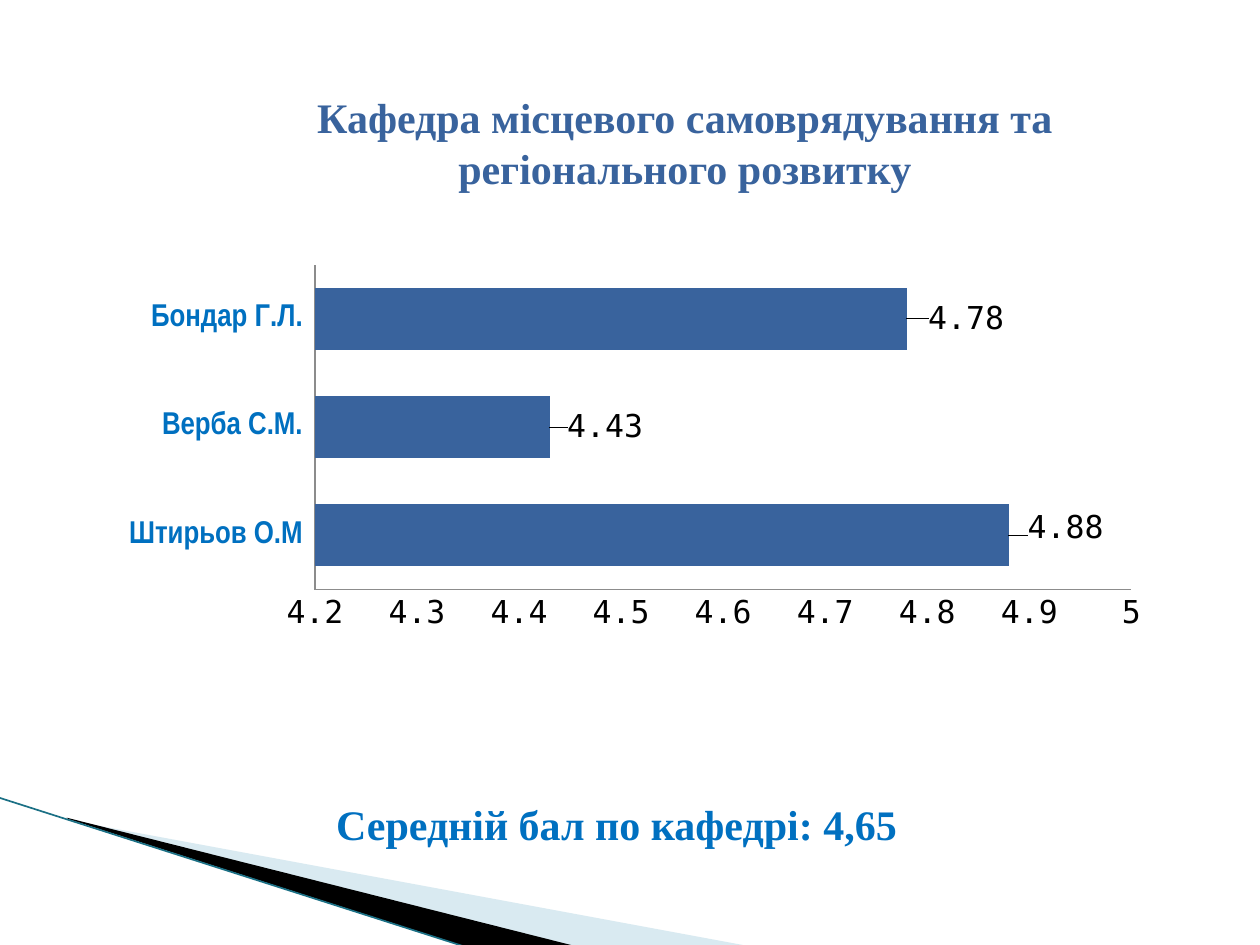
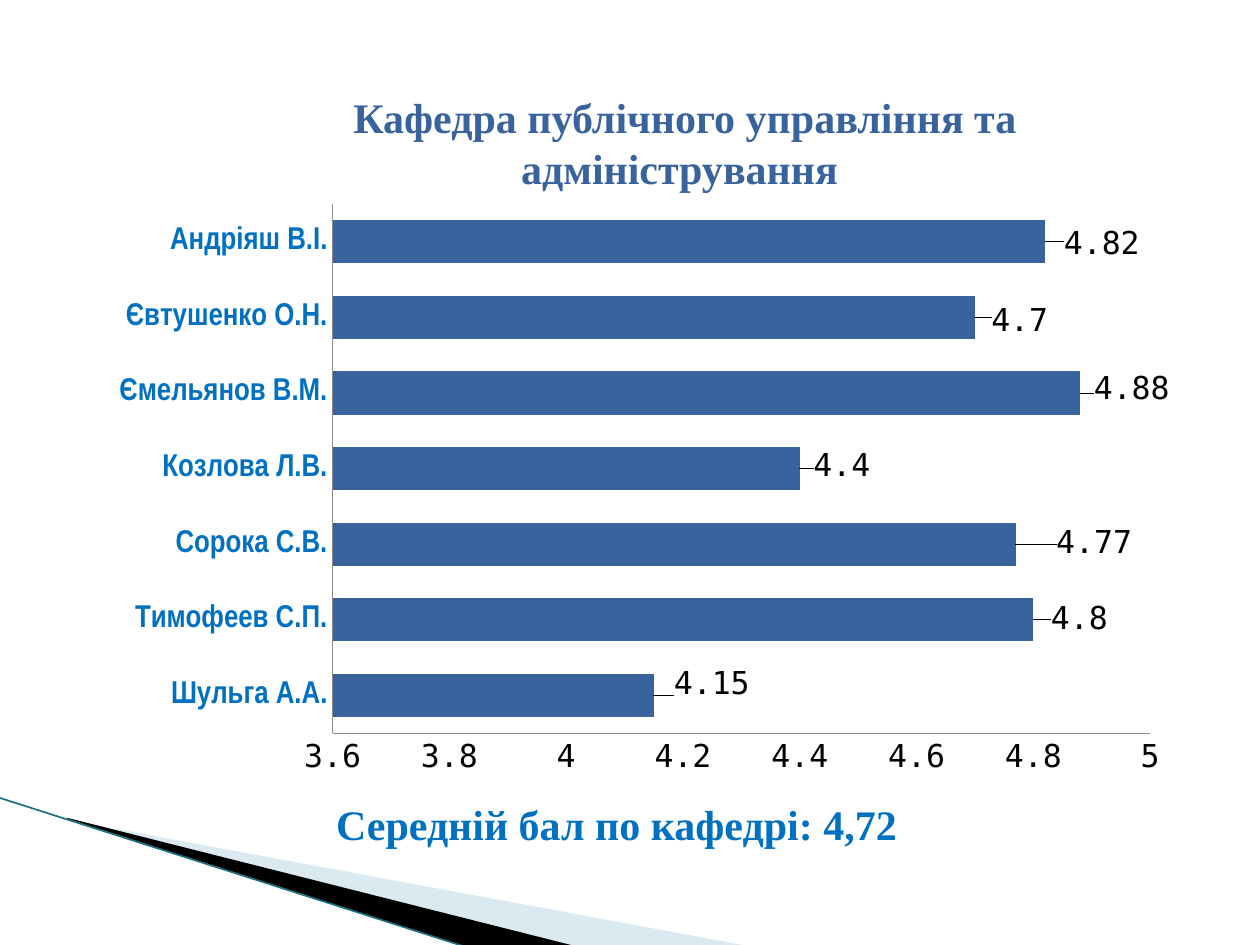
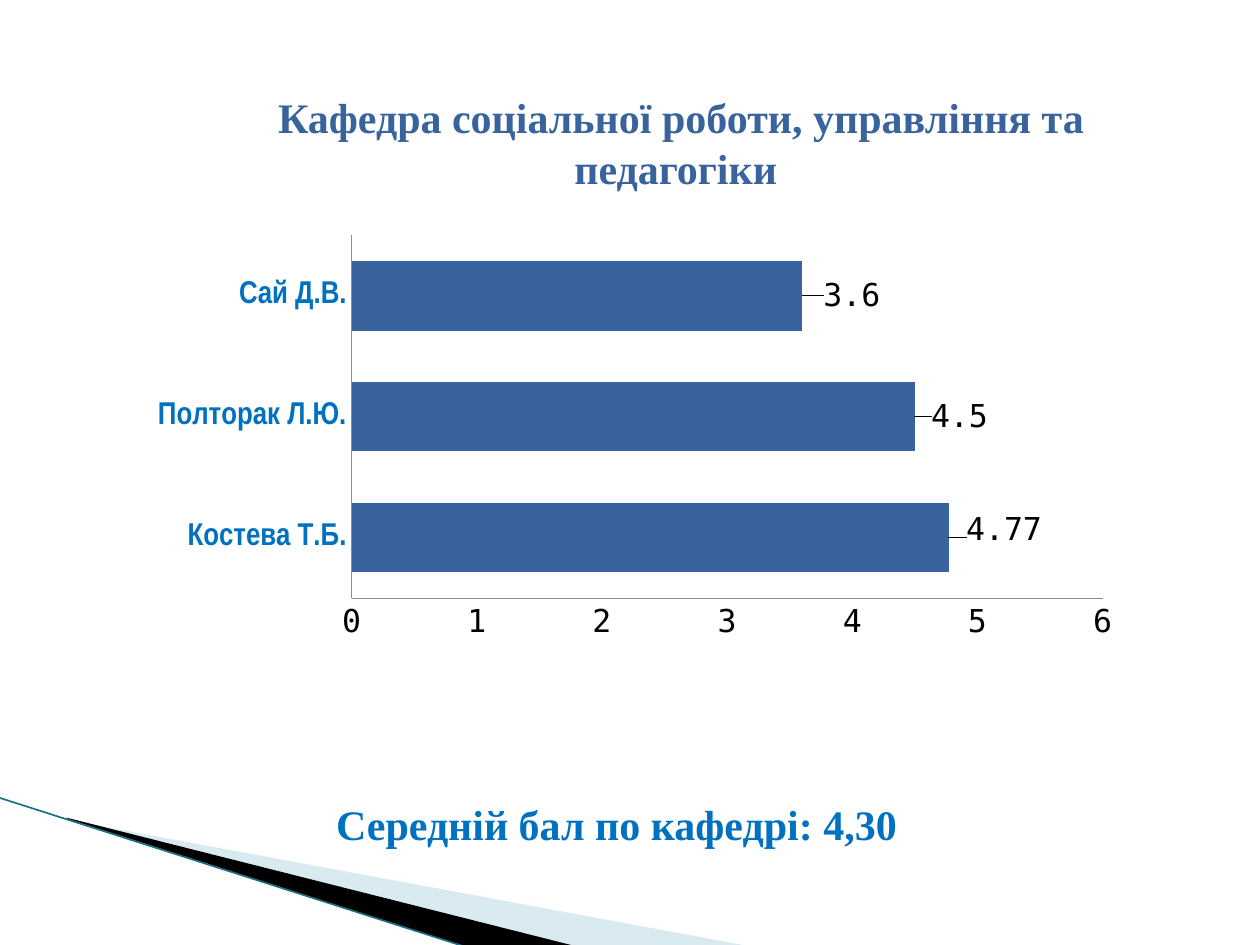
from lxml import etree
from pptx import Presentation
from pptx.chart.data import CategoryChartData
from pptx.dml.color import RGBColor
from pptx.enum.chart import XL_CHART_TYPE, XL_LABEL_POSITION, XL_TICK_MARK
from pptx.enum.shapes import MSO_CONNECTOR
from pptx.enum.text import MSO_ANCHOR, PP_ALIGN
from pptx.oxml import parse_xml
from pptx.oxml.ns import nsdecls, qn
from pptx.util import Pt

BAR = XL_CHART_TYPE.BAR_CLUSTERED
OUTSIDE = XL_LABEL_POSITION.OUTSIDE_END
NO_TICK = XL_TICK_MARK.NONE
STRAIGHT = MSO_CONNECTOR.STRAIGHT
TOP = MSO_ANCHOR.TOP
CENTER = PP_ALIGN.CENTER

PX = 9144  # EMU, 100 px to the inch
COLORS = {
    "title": "39639D", "bar": "39639D", "accent": "0070C0", "text": "000000",
    "axis": "8C8C8C", "pale": "A0CBDC", "dark": "000000", "edge": "1B7085",
}
SERIF, MONO, NARROW = "Times New Roman", "DejaVu Sans Mono", "Arial Narrow"

# Boxes are left, top, width, height; shifts move the value labels.
SLIDES = [
    {
        "title": "Кафедра місцевого самоврядування та регіонального розвитку",
        "head": (209, 68, 669, 91),
        "mean": "4,65",
        "chart": (86, 203, 836, 305),
        "plot": (250, 210, 648, 258),
        "scale": (4.2, 5, 0.1),
        "rows": [("Штирьов О.М ", 4.88, (11, -6)),
                 ("Верба С.М. ", 4.43, (10, 0)),
                 ("Бондар Г.Л. ", 4.78, (13, 0))],
    },
    {
        "title": "Кафедра публічного управління та адміністрування ",
        "head": (209, 68, 669, 91),
        "mean": "4,72",
        "chart": (78, 153, 859, 472),
        "plot": (264, 162, 649, 420),
        "scale": (3.6, 5, 0.2),
        "rows": [("Шульга А.А.", 4.15, (12, -9)),
                 ("Тимофеев С.П.", 4.8, (10, -1)),
                 ("Сорока С.В.", 4.77, (28, -1)),
                 ("Козлова Л.В.", 4.4, (7, -2)),
                 ("Ємельянов В.М.", 4.88, (7, -3)),
                 ("Євтушенко О.Н.", 4.7, (9, 3)),
                 ("Андріяш В.І.", 4.82, (11, 2))],
    },
    {
        "title": "Кафедра соціальної роботи, управління та педагогіки ",
        "head": (203, 68, 675, 91),
        "mean": "4,30",
        "chart": (109, 180, 789, 336),
        "plot": (279, 187, 596, 288),
        "scale": (0, 6, 1),
        "rows": [("Костева Т.Б.", 4.77, (10, -6)),
                 ("Полторак Л.Ю.", 4.5, (9, 0)),
                 ("Сай Д.В.", 3.6, (13, 0))],
    },
]


def emu(box):
    return [n * PX for n in box]


def color(name):
    return RGBColor.from_string(COLORS[name])


def style(font, face, size, name, bold=False):
    font.name, font.size, font.bold = face, Pt(size), bold
    font.color.rgb = color(name)


def layout(inner="", **parts):
    """Manual chart layout, given as fractions of the chart."""
    tags = "".join(f'<c:{key} val="{val:.4f}"/>' for key, val in parts.items())
    return parse_xml(f'<c:layout {nsdecls("c")}><c:manualLayout>{inner}{tags}'
                     '</c:manualLayout></c:layout>')


class Deck:
    def __init__(self):
        self.prs = Presentation()
        self.prs.slide_width, self.prs.slide_height = emu((1000, 750))
        self.slide = None

    def add(self):
        self.slide = self.prs.slides.add_slide(self.prs.slide_layouts[5])
        self.wedge([(55, 651), (595, 751), (456, 751), (55, 650)], "pale", 40)
        self.wedge([(53, 649), (457, 751), (372, 752), (54, 650)], "dark")
        self.line((-1, 633, 371, 752), "edge", 0.95)

    def wedge(self, points, name, alpha=100):
        pen = self.slide.shapes.build_freeform(*points[0], scale=PX)
        pen.add_line_segments(points[1:])
        shape = pen.convert_to_shape()
        shape.shadow.inherit = False
        shape.fill.solid()
        shape.fill.fore_color.rgb = color(name)
        shape.line.fill.background()
        if alpha < 100:
            tint = shape._element.spPr.find(".//" + qn("a:srgbClr"))
            etree.SubElement(tint, qn("a:alpha"), val=str(alpha * 1000))

    def line(self, ends, name, width):
        line = self.slide.shapes.add_connector(STRAIGHT, *emu(ends))
        line.line.color.rgb = color(name)
        line.line.width = Pt(width)
        etree.SubElement(line._element.spPr, qn("a:effectLst"))

    def title(self, text, box):
        head = self.slide.shapes.title
        head.left, head.top, head.width, head.height = emu(box)
        frame = head.text_frame
        frame.text = text
        frame.word_wrap = True
        frame.vertical_anchor = TOP
        para = frame.paragraphs[0]
        para.alignment = CENTER
        style(para.runs[0].font, SERIF, 24, "title", True)

    def note(self, text, box):
        frame = self.slide.shapes.add_textbox(*emu(box)).text_frame
        frame.text = text
        frame.word_wrap = False
        style(frame.paragraphs[0].runs[0].font, SERIF, 24, "accent", True)

    def chart(self, rows, box, plot, scale):
        names, vals, shifts = zip(*rows)
        data = CategoryChartData()
        data.categories = names
        data.add_series("Series 1", vals)
        chart = self.slide.shapes.add_chart(BAR, *emu(box), data).chart
        chart.has_legend = chart.has_title = False
        style(chart.font, MONO, 18, "text")

        # Plot area
        left, top, wide, high = box
        area = chart._chartSpace.chart.plotArea
        for old in area.findall(qn("c:layout")):
            area.remove(old)
        area.insert(0, layout(
            '<c:layoutTarget val="inner"/><c:xMode val="edge"/><c:yMode val="edge"/>',
            x=(plot[0] - left) / wide, y=(plot[1] - top) / high,
            w=plot[2] / wide, h=plot[3] / high))

        # Axes
        cat, val = chart.category_axis, chart.value_axis
        for axis in (cat, val):
            axis.has_major_gridlines = False
            axis.major_tick_mark = axis.minor_tick_mark = NO_TICK
            axis.format.line.color.rgb = color("axis")
            axis.format.line.width = Pt(0.75)
        style(cat.tick_labels.font, NARROW, 18, "accent", True)
        style(val.tick_labels.font, MONO, 18, "text")
        val.minimum_scale, val.maximum_scale, val.major_unit = scale

        # Bars and their values
        bars = chart.plots[0]
        bars.gap_width = 75
        bars.vary_by_categories = False
        series = bars.series[0]
        series.format.fill.solid()
        series.format.fill.fore_color.rgb = color("bar")
        labels = series.data_labels
        labels.show_value = True
        labels.position = OUTSIDE
        style(labels.font, MONO, 18, "text")
        for i, (dx, dy) in enumerate(shifts):
            label = series.points[i].data_label
            label.position = OUTSIDE
            style(label.font, MONO, 18, "text")
        for tag, (dx, dy) in zip(labels._element.findall(qn("c:dLbl")), shifts):
            tag.insert(1, layout(x=dx / wide, y=dy / high))


def main():
    deck = Deck()
    for page in SLIDES:
        deck.add()
        deck.title(page["title"], page["head"])
        deck.chart(page["rows"], page["chart"], page["plot"], page["scale"])
        deck.note(f"Середній бал по кафедрі: {page['mean']}", (257, 629, 470, 50))
    deck.prs.save("out.pptx")


if __name__ == "__main__":
    main()
